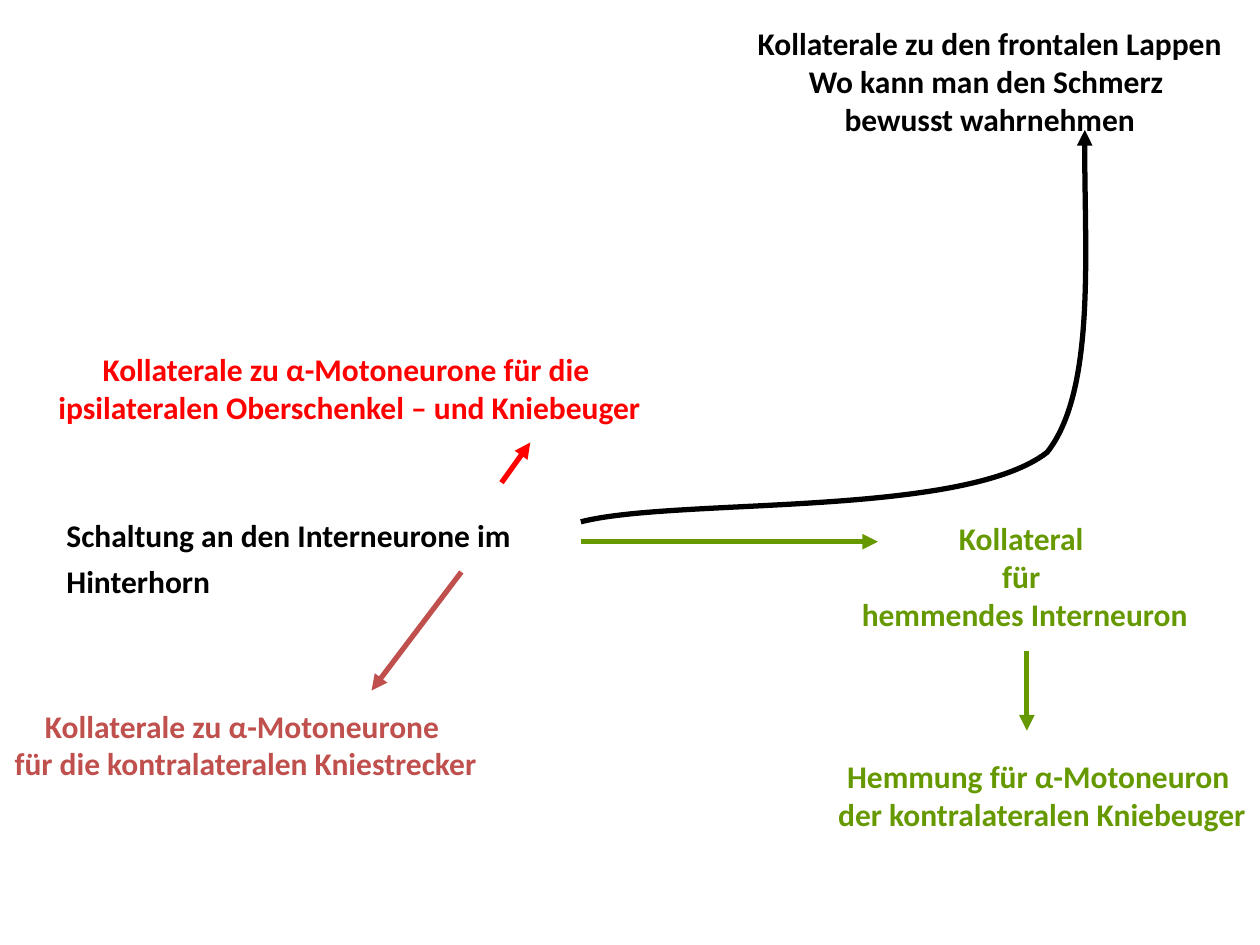
from lxml import etree
from pptx import Presentation
from pptx.dml.color import RGBColor
from pptx.enum.shapes import MSO_CONNECTOR
from pptx.enum.text import MSO_AUTO_SIZE, PP_ALIGN
from pptx.oxml.ns import qn
from pptx.util import Cm, Pt

STRAIGHT = MSO_CONNECTOR.STRAIGHT
CENTER, LEFT = PP_ALIGN.CENTER, PP_ALIGN.LEFT
FIT_SHAPE = MSO_AUTO_SIZE.SHAPE_TO_FIT_TEXT

BLACK = RGBColor(0x00, 0x00, 0x00)
RED = RGBColor(0xFF, 0x00, 0x00)
GREEN = RGBColor(0x66, 0x99, 0x00)
BRICK = RGBColor(0xC0, 0x50, 0x4D)

# text, (left, top, width, height) in cm, colour
LABELS = [
    ("Kollaterale zu α-Motoneurone für die \n"
     "ipsilateralen Oberschenkel – und Kniebeuger",
     (0.89, 6.93, 12.32, 1.8), RED),
    ("Kollateral \nfür \nhemmendes Interneuron",
     (17.09, 10.34, 7.14, 2.57), GREEN),
    ("Hemmung für α-Motoneuron \nder kontralateralen Kniebeuger",
     (16.61, 15.14, 8.79, 1.8), GREEN),
    ("Kollaterale zu α-Motoneurone \nfür die kontralateralen Kniestrecker",
     (0, 14.12, 9.91, 1.8), BRICK),
    ("Kollaterale zu den frontalen Lappen\nWo kann man den Schmerz \n"
     "bewusst wahrnehmen",
     (14.99, 0.36, 9.93, 2.57), BLACK),
]

# start, end in cm, colour
ARROWS = [
    ((10.11, 9.73), (10.69, 8.92), RED),
    ((20.7, 13.13), (20.7, 14.73), GREEN),
    ((9.3, 11.53), (7.49, 13.92), BRICK),
    ((11.71, 10.92), (17.7, 10.92), GREEN),
]

# start point, then two control points and an end point per curve, in cm
PAIN_PATHWAY = [
    (11.71, 10.52),
    (13.61, 10.03), (19.41, 10.44), (21.11, 9.12),
    (22.1, 7.87), (21.84, 4.75), (21.87, 2.62),
]


class ReflexSlide:
    """Holds the text and line style and the slide being drawn."""

    font = {"name": "Calibri", "size": Pt(18), "bold": True}
    line_width = Pt(3)

    def __init__(self, deck):
        self.page = deck.slides.add_slide(deck.slide_layouts[6])

    def label(self, text, place, colour, align=CENTER, wrap=False, spacing=None):
        box = self.page.shapes.add_textbox(*map(Cm, place))
        frame = box.text_frame
        frame.text = text
        frame.word_wrap = wrap
        frame.auto_size = FIT_SHAPE
        for para in frame.paragraphs:
            para.alignment = align
            para.line_spacing = spacing
            for span in para.runs:
                for key, value in self.font.items():
                    setattr(span.font, key, value)
                span.font.color.rgb = colour

    def arrow(self, start, end, colour):
        line = self.page.shapes.add_connector(
            STRAIGHT, *map(Cm, start), *map(Cm, end))
        self.finish_arrow(line, colour)

    def curved_arrow(self, points, colour):
        """Draw Bézier curves by turning each three line segments into one."""
        start, *rest = [(Cm(x), Cm(y)) for x, y in points]
        builder = self.page.shapes.build_freeform(*start)
        builder.add_line_segments(rest, close=False)
        curve = builder.convert_to_shape()
        curve.fill.background()
        segments = list(curve.element.iter(qn("a:lnTo")))
        for first in range(0, len(segments), 3):
            bezier = etree.Element(qn("a:cubicBezTo"))
            segments[first].addprevious(bezier)
            for segment in segments[first:first + 3]:
                bezier.append(segment[0])
                segment.getparent().remove(segment)
        self.finish_arrow(curve, colour)

    def finish_arrow(self, shape, colour):
        """Set the line, its arrowhead and the empty effect list."""
        shape.line.color.rgb = colour
        shape.line.width = self.line_width
        properties = shape.element.spPr
        etree.SubElement(properties.find(qn("a:ln")), qn("a:tailEnd"), type="triangle")
        etree.SubElement(properties, qn("a:effectLst"))


def main():
    deck = Presentation()
    deck.slide_width, deck.slide_height = Cm(25.4), Cm(19.05)
    slide = ReflexSlide(deck)
    for label in LABELS:
        slide.label(*label)
    slide.label("Schaltung an den Interneurone im Hinterhorn",
                (1.09, 10.13, 10.21, 2.11), BLACK,
                align=LEFT, wrap=True, spacing=1.2)
    for arrow in ARROWS:
        slide.arrow(*arrow)
    slide.curved_arrow(PAIN_PATHWAY, BLACK)
    deck.save("out.pptx")


if __name__ == "__main__":
    main()
